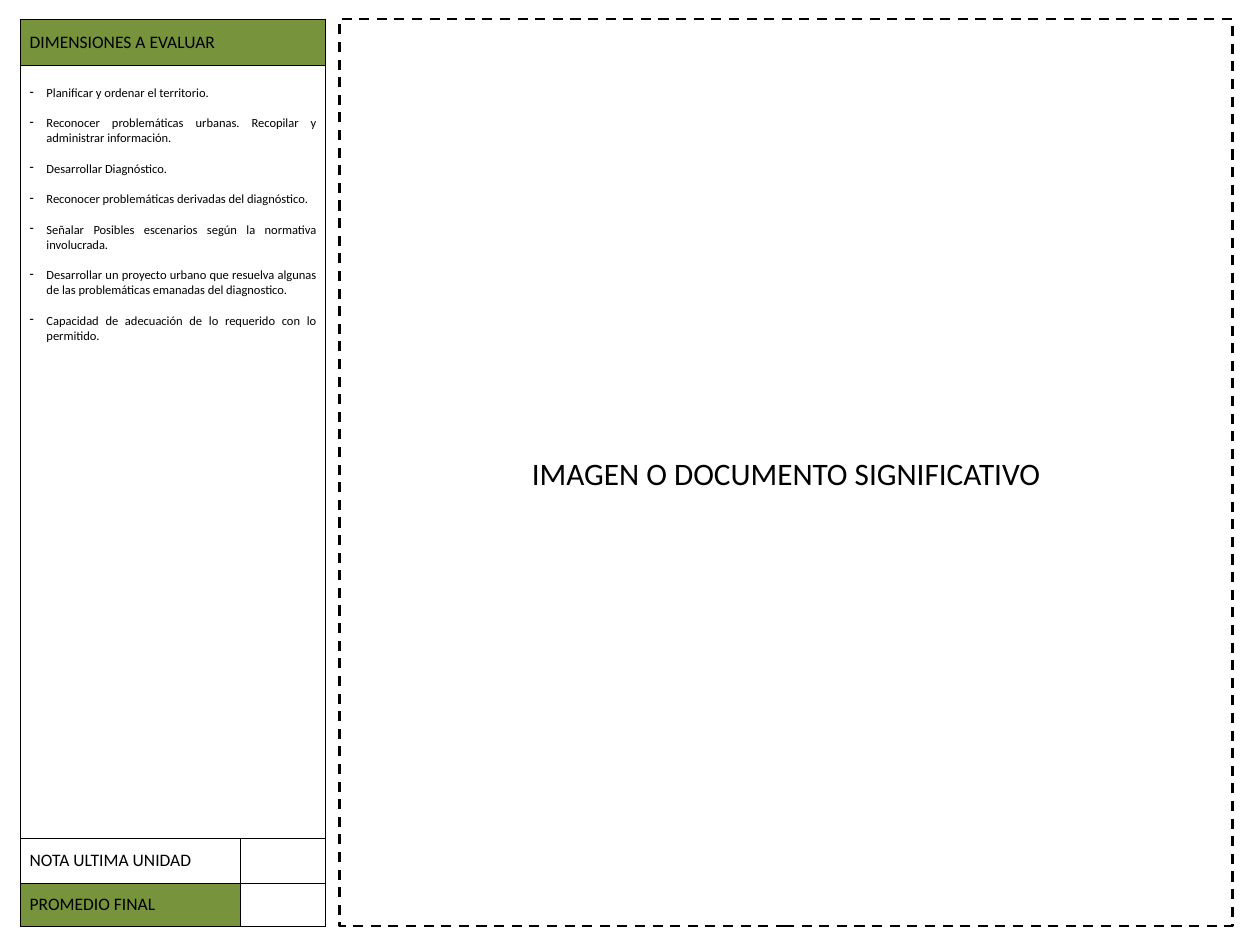
from lxml import etree
from pptx import Presentation
from pptx import util as u
from pptx.dml.color import RGBColor
from pptx.enum import dml, shapes, text
from pptx.oxml.ns import qn

COLORS = {"ink": "000000", "green": "77933C", "paper": "FFFFFF"}
DIMENSIONS = [
    "Planificar y ordenar el territorio.",
    "Reconocer problemáticas urbanas. Recopilar y administrar información.",
    "Desarrollar Diagnóstico.",
    "Reconocer problemáticas derivadas del diagnóstico.",
    "Señalar Posibles escenarios según la normativa involucrada.",
    "Desarrollar un proyecto urbano que resuelva algunas de las problemáticas emanadas del diagnostico.",
    "Capacidad de adecuación de lo requerido con lo permitido.",
]


class Sheet:
    font = "Calibri"

    def __init__(self, slide):
        self.slide = slide

    def color(self, key):
        return RGBColor.from_string(COLORS[key])

    def style(self, paragraph, size, align):
        paragraph.alignment = align
        paragraph.font.name = self.font
        paragraph.font.size = u.Pt(size)
        paragraph.font.color.rgb = self.color("ink")

    def table(self, left, top, widths, heights):
        frame = self.slide.shapes.add_table(
            len(heights), len(widths), u.Pt(left), u.Pt(top),
            u.Pt(sum(widths)), u.Pt(sum(heights)))
        grid = frame.table
        grid.first_row = grid.horz_banding = False
        for column, width in zip(grid.columns, widths):
            column.width = u.Pt(width)
        for row, height in zip(grid.rows, heights):
            row.height = u.Pt(height)
        return grid

    def borders(self, cell, left=1, right=1, top=1, bottom=1):
        properties = cell._tc.get_or_add_tcPr()
        sides = {"lnL": left, "lnR": right, "lnT": top, "lnB": bottom}
        for position, (side, width) in enumerate(sides.items()):
            line = etree.Element(qn(f"a:{side}"), w=str(u.Pt(width)))
            fill = etree.SubElement(line, qn("a:solidFill"))
            etree.SubElement(fill, qn("a:srgbClr"), val=COLORS["ink"])
            properties.insert(position, line)

    def label(self, cell, wording, fill):
        cell.fill.solid()
        cell.fill.fore_color.rgb = self.color(fill)
        cell.vertical_anchor = text.MSO_ANCHOR.MIDDLE
        paragraph = cell.text_frame.paragraphs[0]
        paragraph.text = wording
        self.style(paragraph, 14, text.PP_ALIGN.JUSTIFY)

    def dashes(self, cell, items):
        cell.fill.background()
        cell.margin_top = u.Pt(15.8)
        body = cell.text_frame
        for index, item in enumerate(items):
            paragraph = body.add_paragraph() if index else body.paragraphs[0]
            paragraph.text = item
            self.style(paragraph, 10, text.PP_ALIGN.JUSTIFY)
            if index:
                paragraph.space_before = u.Pt(12.2)
            properties = paragraph._p.get_or_add_pPr()
            properties.set("marL", str(u.Pt(13.5)))
            properties.set("indent", str(-u.Pt(13.5)))
            bullet = etree.Element(qn("a:buChar"), char="-")
            properties.find(qn("a:defRPr")).addprevious(bullet)

    def dashed_frame(self, left, top, width, height, wording):
        frame = self.slide.shapes.add_shape(
            shapes.MSO_SHAPE.RECTANGLE,
            u.Pt(left), u.Pt(top), u.Pt(width), u.Pt(height))
        frame.shadow.inherit = False
        frame.fill.background()
        frame.line.color.rgb = self.color("ink")
        frame.line.width = u.Pt(2)
        frame.line.dash_style = dml.MSO_LINE.DASH
        frame.text_frame.vertical_anchor = text.MSO_ANCHOR.MIDDLE
        paragraph = frame.text_frame.paragraphs[0]
        paragraph.text = wording
        self.style(paragraph, 25, text.PP_ALIGN.CENTER)


def main():
    deck = Presentation()
    deck.slide_width, deck.slide_height = u.Pt(1008), u.Pt(756)
    sheet = Sheet(deck.slides.add_slide(deck.slide_layouts[6]))

    top = 15.2
    heights = [37.4, 618.5, 35.3, 34.6]
    evaluation = sheet.table(16.5, top, [175.7, 68], heights)
    for row in (0, 1):
        evaluation.cell(row, 0).merge(evaluation.cell(row, 1))
        for column in (0, 1):
            sheet.borders(evaluation.cell(row, column), top=0.5 if row == 0 else 1)
    for row, edges in ((2, {"top": 1, "bottom": 0.5}), (3, {"top": 0.5, "bottom": 1})):
        sheet.borders(evaluation.cell(row, 0), right=0.5, **edges)
        sheet.borders(evaluation.cell(row, 1), left=0.5, **edges)
        evaluation.cell(row, 1).fill.background()

    sheet.label(evaluation.cell(0, 0), "DIMENSIONES A EVALUAR", "green")
    sheet.dashes(evaluation.cell(1, 0), DIMENSIONS)
    sheet.label(evaluation.cell(2, 0), "NOTA ULTIMA UNIDAD", "paper")
    sheet.label(evaluation.cell(3, 0), "PROMEDIO FINAL", "green")

    sheet.dashed_frame(271.5, top, 714.5, sum(heights), "IMAGEN O DOCUMENTO SIGNIFICATIVO")
    deck.save("out.pptx")


if __name__ == "__main__":
    main()
